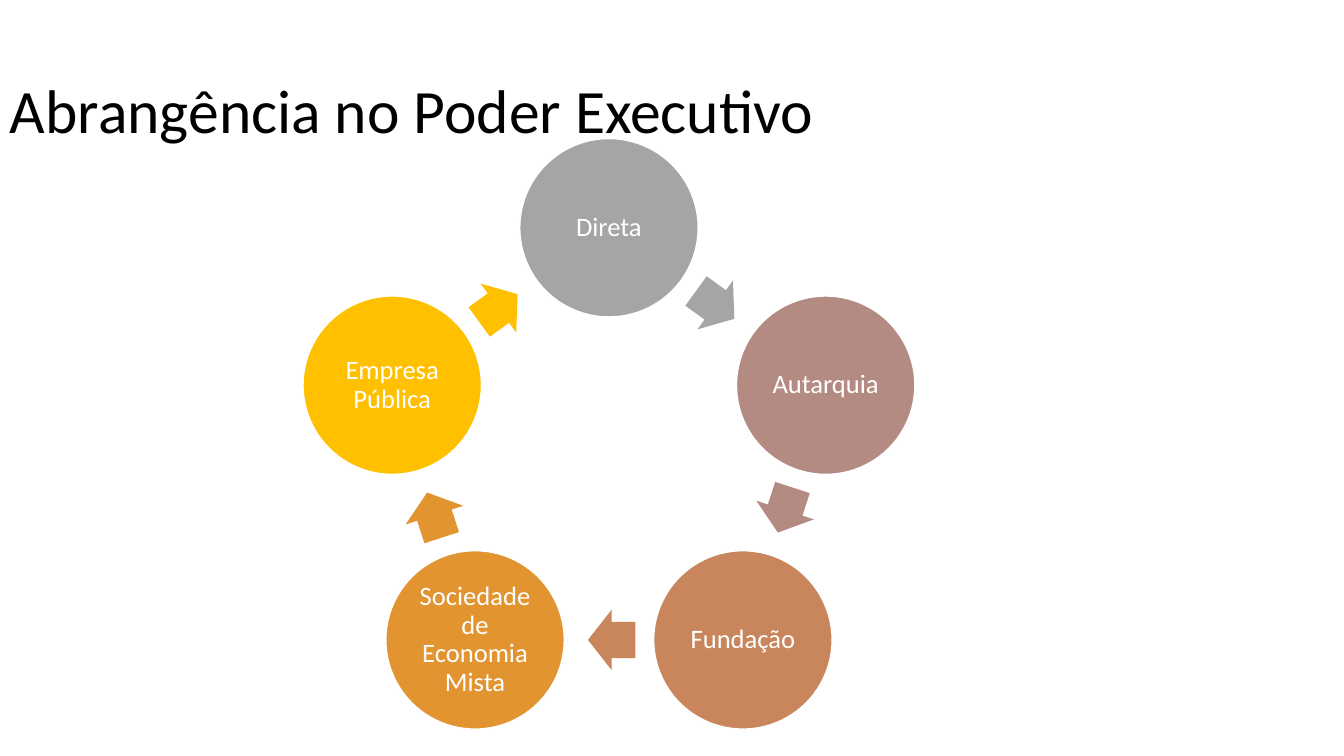
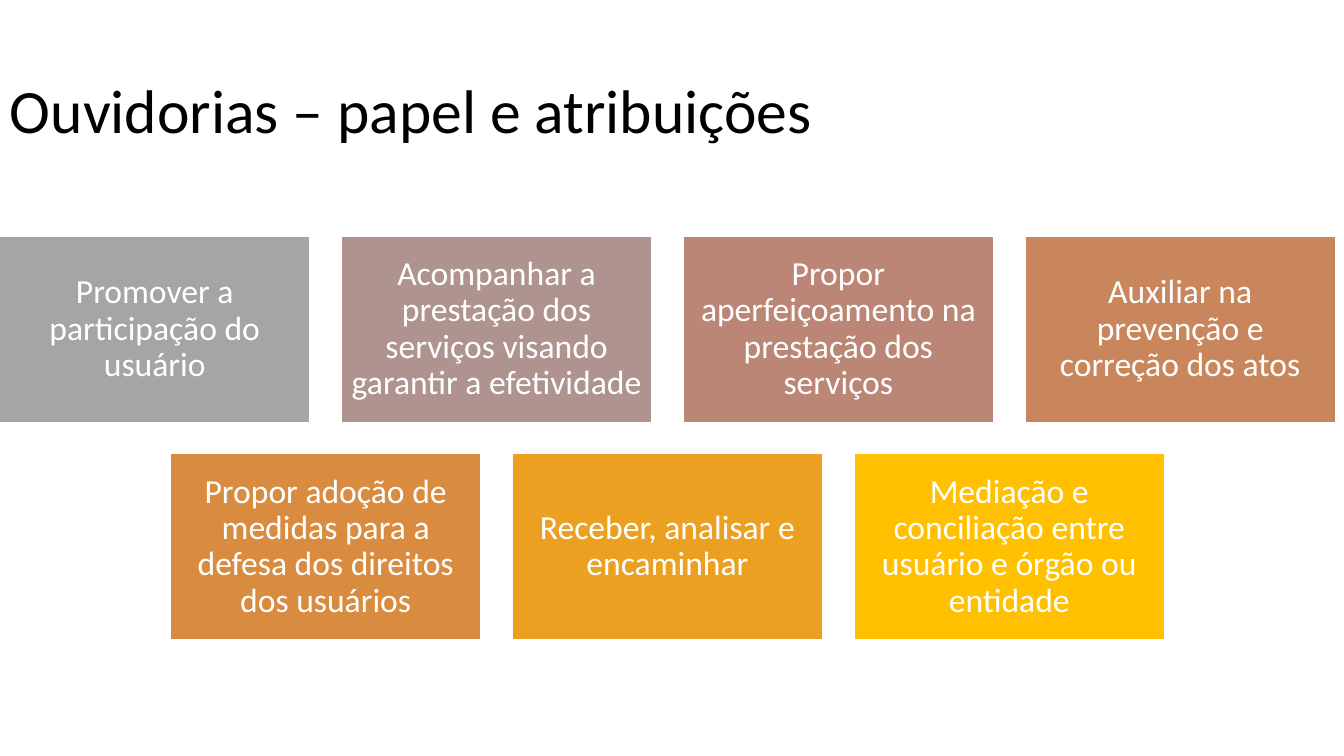
"""Two slides on the reach of the Executive branch and the role of ombudsman offices."""
from math import cos, pi, sin

from pptx import Presentation
from pptx.dml.color import RGBColor
from pptx.enum.shapes import MSO_SHAPE
from pptx.enum.text import MSO_ANCHOR, PP_ALIGN
from pptx.util import Inches, Pt

OVAL, RECTANGLE, ARROW = MSO_SHAPE.OVAL, MSO_SHAPE.RECTANGLE, MSO_SHAPE.RIGHT_ARROW
MIDDLE = MSO_ANCHOR.MIDDLE
LEFT, CENTER = PP_ALIGN.LEFT, PP_ALIGN.CENTER

BLACK = RGBColor(0x00, 0x00, 0x00)
WHITE = RGBColor(0xFF, 0xFF, 0xFF)
GREY = RGBColor(0xA5, 0xA5, 0xA5)
MAUVE = RGBColor(0xAF, 0x93, 0x8F)
ROSE = RGBColor(0xB4, 0x8B, 0x83)
CLAY = RGBColor(0xBB, 0x86, 0x76)
COPPER = RGBColor(0xC9, 0x86, 0x5C)
OCHRE = RGBColor(0xD9, 0x8C, 0x3F)
ORANGE = RGBColor(0xE1, 0x94, 0x30)
AMBER = RGBColor(0xEB, 0xA0, 0x21)
GOLD = RGBColor(0xFF, 0xC0, 0x00)

FONT = "Calibri"
TITLE_FORMAT = {"name": FONT, "size": Pt(44), "color": BLACK}
NODE_FORMAT = {"name": FONT, "size": Pt(19), "color": WHITE}
CARD_FORMAT = {"name": FONT, "size": Pt(24), "color": WHITE}

CYCLE_TITLE = "Abrangência no Poder Executivo"
CYCLE = [
    ("Direta", GREY),
    ("Autarquia", ROSE),
    ("Fundação", COPPER),
    ("Sociedade de Economia Mista", ORANGE),
    ("Empresa Pública", GOLD),
]
CARDS_TITLE = "Ouvidorias – papel e atribuições"
CARD_ROWS = [
    [
        ("Promover a participação do usuário", GREY),
        ("Acompanhar a prestação dos serviços visando garantir a efetividade", MAUVE),
        ("Propor aperfeiçoamento na prestação dos serviços", CLAY),
        ("Auxiliar na prevenção e correção dos atos", COPPER),
    ],
    [
        ("Propor adoção de medidas para a defesa dos direitos dos usuários", OCHRE),
        ("Receber, analisar e encaminhar", AMBER),
        ("Mediação e conciliação entre usuário e órgão ou entidade", GOLD),
    ],
]

RING_X, RING_Y, RING_RADIUS = 6.04, 4.52, 2.26
NODE_SIZE, NODE_INSET = 1.77, 0.03
ARROW_WIDTH, ARROW_HEIGHT, ARROW_SHARE = 0.47, 0.6, 0.49
CARD_WIDTH, CARD_HEIGHT, CARD_GAP, CARD_INSET = 3.08, 1.85, 0.31, 0.1
CARDS_CENTER, CARDS_TOP = 6.62, 2.34


def write(box, text, style, align, inset=None):
    """Put one formatted paragraph in the box."""
    frame = box.text_frame
    frame.word_wrap = True
    frame.vertical_anchor = MIDDLE
    if inset is not None:
        for side in ("left", "top", "right", "bottom"):
            setattr(frame, f"margin_{side}", Inches(inset))
    para = frame.paragraphs[0]
    para.alignment = align
    para.line_spacing = 0.9
    span = para.add_run()
    span.text = text
    for name, value in style.items():
        if name == "color":
            span.font.color.rgb = value
        else:
            setattr(span.font, name, value)


def add_page(deck, title):
    """Add a blank page with its title."""
    page = deck.slides.add_slide(deck.slide_layouts[6])
    box = page.shapes.add_textbox(Inches(0), Inches(0.4), Inches(11.5), Inches(1.45))
    write(box, title, TITLE_FORMAT, LEFT)
    return page


def add_block(page, kind, center, size, color):
    """Add a filled shape placed by its centre."""
    (x, y), (width, height) = center, size
    block = page.shapes.add_shape(kind, Inches(x - width / 2), Inches(y - height / 2),
                                  Inches(width), Inches(height))
    block.shadow.inherit = False
    block.fill.solid()
    block.fill.fore_color.rgb = color
    block.line.fill.background()
    return block


def outline(block):
    """Give the block a thin white edge."""
    block.line.color.rgb = WHITE
    block.line.width = Pt(1)


def build_cycle(deck):
    """Draw the ring of circles, each with an arrow to the next."""
    page = add_page(deck, CYCLE_TITLE)
    count = len(CYCLE)
    turns = [2 * pi * index / count for index in range(count)]
    centers = [(RING_X + RING_RADIUS * sin(turn), RING_Y - RING_RADIUS * cos(turn))
               for turn in turns]
    for index, (label, color) in enumerate(CYCLE):
        start, end = centers[index], centers[(index + 1) % count]
        node = add_block(page, OVAL, start, (NODE_SIZE, NODE_SIZE), color)
        outline(node)
        write(node, label, NODE_FORMAT, CENTER, NODE_INSET)
        middle = [a + (b - a) * ARROW_SHARE for a, b in zip(start, end)]
        arrow = add_block(page, ARROW, middle, (ARROW_WIDTH, ARROW_HEIGHT), color)
        arrow.adjustments[0] = 0.6
        arrow.adjustments[1] = 0.5
        arrow.rotation = 360 * (index + 0.5) / count


def build_cards(deck):
    """Draw the centred rows of cards."""
    page = add_page(deck, CARDS_TITLE)
    for row, cards in enumerate(CARD_ROWS):
        y = CARDS_TOP + CARD_HEIGHT / 2 + row * (CARD_HEIGHT + CARD_GAP)
        for column, (label, color) in enumerate(cards):
            offset = column - (len(cards) - 1) / 2
            x = CARDS_CENTER + offset * (CARD_WIDTH + CARD_GAP)
            card = add_block(page, RECTANGLE, (x, y), (CARD_WIDTH, CARD_HEIGHT), color)
            outline(card)
            write(card, label, CARD_FORMAT, CENTER, CARD_INSET)


def main():
    """Build and save the deck."""
    deck = Presentation()
    deck.slide_width, deck.slide_height = Inches(13.33), Inches(7.5)
    build_cycle(deck)
    build_cards(deck)
    deck.save("out.pptx")


if __name__ == "__main__":
    main()
